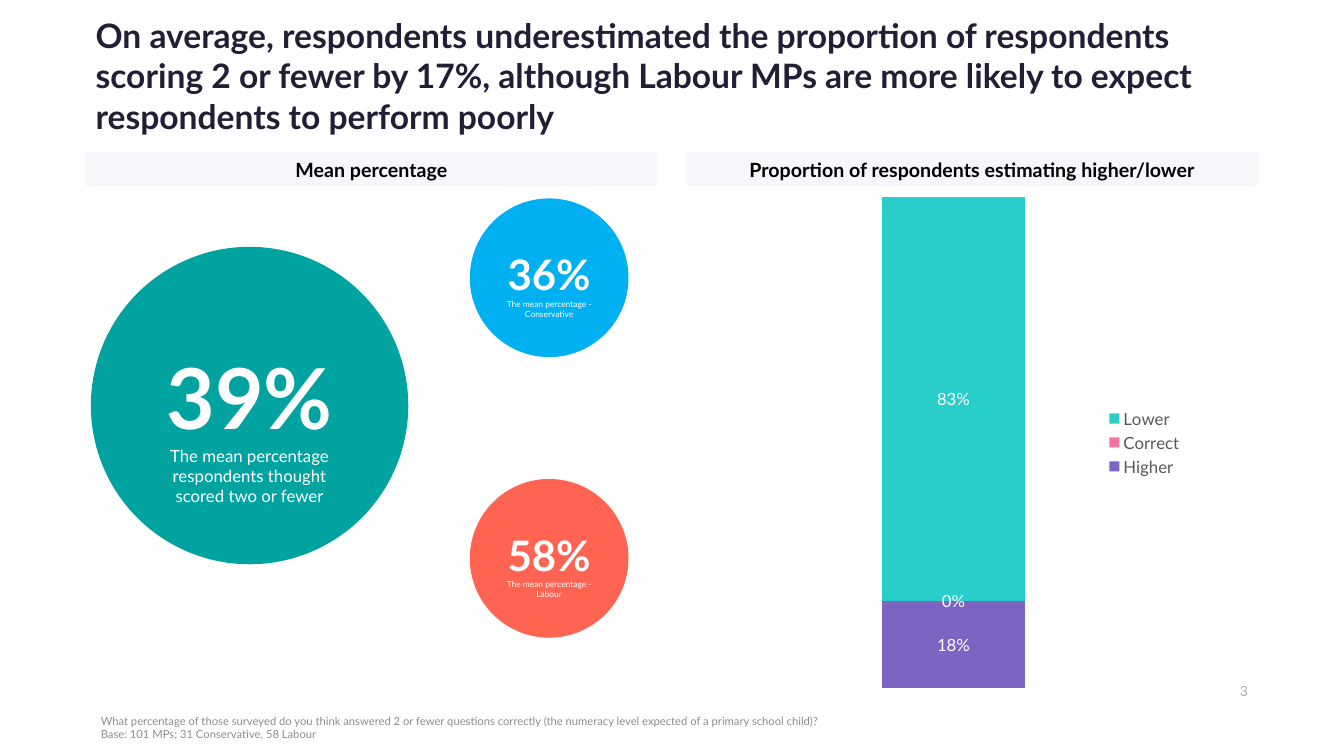
from pptx import Presentation
from pptx.chart.data import CategoryChartData
from pptx.dml.color import RGBColor
from pptx.enum.chart import XL_CHART_TYPE as Kind, XL_LEGEND_POSITION as Side
from pptx.enum.shapes import MSO_SHAPE as Form
from pptx.enum.text import MSO_ANCHOR as Anchor, PP_ALIGN as Align
from pptx.util import Cm, Pt

WHITE = "FFFFFF"
LEFT, WIDE = 2.16, 29.54


def tint(item, hue):
    """Set a fill to solid, or a font, in the given colour."""
    if hasattr(item, "solid"):
        item.solid()
        item.fore_color.rgb = RGBColor.from_string(hue)
    else:
        item.color.rgb = RGBColor.from_string(hue)


def style(font, size, hue, bold=False):
    """Give a font its face, size, colour and weight."""
    font.name, font.size, font.bold = "Lato", Pt(size), bold
    tint(font, hue)


def write(frame, lines, align):
    """Fill a frame with lines of text, size, colour and weight."""
    frame.word_wrap = True
    frame.text = "\n".join(line[0] for line in lines)
    for para, line in zip(frame.paragraphs, lines):
        para.alignment = align
        style(para.runs[0].font, *line[1:])


def add_text(slide, box, lines, align=Align.LEFT):
    """Add a text box and return its frame."""
    frame = slide.shapes.add_textbox(*map(Cm, box)).text_frame
    write(frame, lines, align)
    return frame


def add_block(slide, form, box, hue, lines):
    """Add a filled shape with centred text and return its frame."""
    shape = slide.shapes.add_shape(form, *map(Cm, box))
    shape.shadow.inherit = False
    tint(shape.fill, hue)
    shape.line.fill.background()
    frame = shape.text_frame
    frame.vertical_anchor = Anchor.MIDDLE
    write(frame, lines, Align.CENTER)
    return frame


def add_disc(slide, left, top, size, hue, drop, mean, note):
    """Add a circle with a mean above its note, set low by a top inset."""
    frame = add_block(slide, Form.OVAL, (left, top, size, size), hue,
                      [(*mean, WHITE, True), (*note, WHITE)])
    frame.margin_top = Cm(drop)


def add_stack(slide, box, parts):
    """Add the stacked column of estimates with its legend."""
    data = CategoryChartData(number_format="0%")
    data.categories = ["1"]
    for name, share, _ in parts:
        data.add_series(name, [share])
    chart = slide.shapes.add_chart(
        Kind.COLUMN_STACKED_100, *map(Cm, box), data).chart
    style(chart.font, 10, "000000")
    chart.has_title = False
    chart.has_legend = True
    chart.legend.position = Side.RIGHT
    chart.legend.include_in_layout = False
    style(chart.legend.font, 12, "595959")
    chart.value_axis.has_major_gridlines = False
    chart.value_axis.visible = chart.category_axis.visible = False
    plot = chart.plots[0]
    plot.gap_width, plot.overlap = 100, 100
    plot.vary_by_categories = False
    for row, (_, _, hue) in zip(plot.series, parts):
        tint(row.format.fill, hue)
        tags = row.data_labels
        tags.show_value = True
        tags.number_format, tags.number_format_is_linked = "0%", False
        style(tags.font, 12, WHITE)


def main():
    """Build the slide and save it."""
    deck = Presentation()
    deck.slide_width, deck.slide_height = Cm(33.87), Cm(19.05)
    slide = deck.slides.add_slide(deck.slide_layouts[6])

    add_text(slide, (LEFT, 0.25, WIDE, 3.33), [(
        "On average, respondents underestimated the proportion of respondents "
        "scoring 2 or fewer by 17%, although Labour MPs are more likely to "
        "expect respondents to perform poorly", 24, "241D36", True)])

    heads = ["Mean percentage",
             "Proportion of respondents estimating higher/lower"]
    for col, head in enumerate(heads):
        add_block(slide, Form.RECTANGLE,
                  (LEFT + col * 15.14, 3.84, 14.4, 0.86), "F7F6FB",
                  [(head, 14, "000000", True)])

    add_disc(slide, 2.29, 6.22, 8, "00A3A0", 1.14, ("39%", 60),
             ("The mean percentage respondents thought scored two or fewer",
              12))
    for top, hue, mean, party in [(5, "00B0F0", "36%", "Conservative"),
                                  (12.07, "FF6352", "58%", "Labour")]:
        add_disc(slide, 11.84, top, 4, hue, 0.43, (mean, 30),
                 (f"The mean percentage - {party}", 6))

    add_stack(slide, (20.24, 4.7, 9.83, 12.9),
              [("Higher", 0.18, "7C64C3"), ("Correct", 0, "F372A1"),
               ("Lower", 0.83, "29CDCA")])

    foot = add_text(slide, (2.29, 17.88, WIDE, 0.79), [
        ("What percentage of those surveyed do you think answered 2 or fewer "
         "questions correctly (the numeracy level expected of a primary "
         "school child)?", 8, "8C8C8C"),
        ("Base: 101 MPs; 31 Conservative, 58 Labour", 8, "8C8C8C")])
    foot.margin_top = foot.margin_bottom = 0
    foot.vertical_anchor = Anchor.BOTTOM
    add_text(slide, (29.01, 17.07, 2.69, 0.69), [("3", 10, "ADABB3")],
             Align.RIGHT)

    deck.save("out.pptx")


if __name__ == "__main__":
    main()
